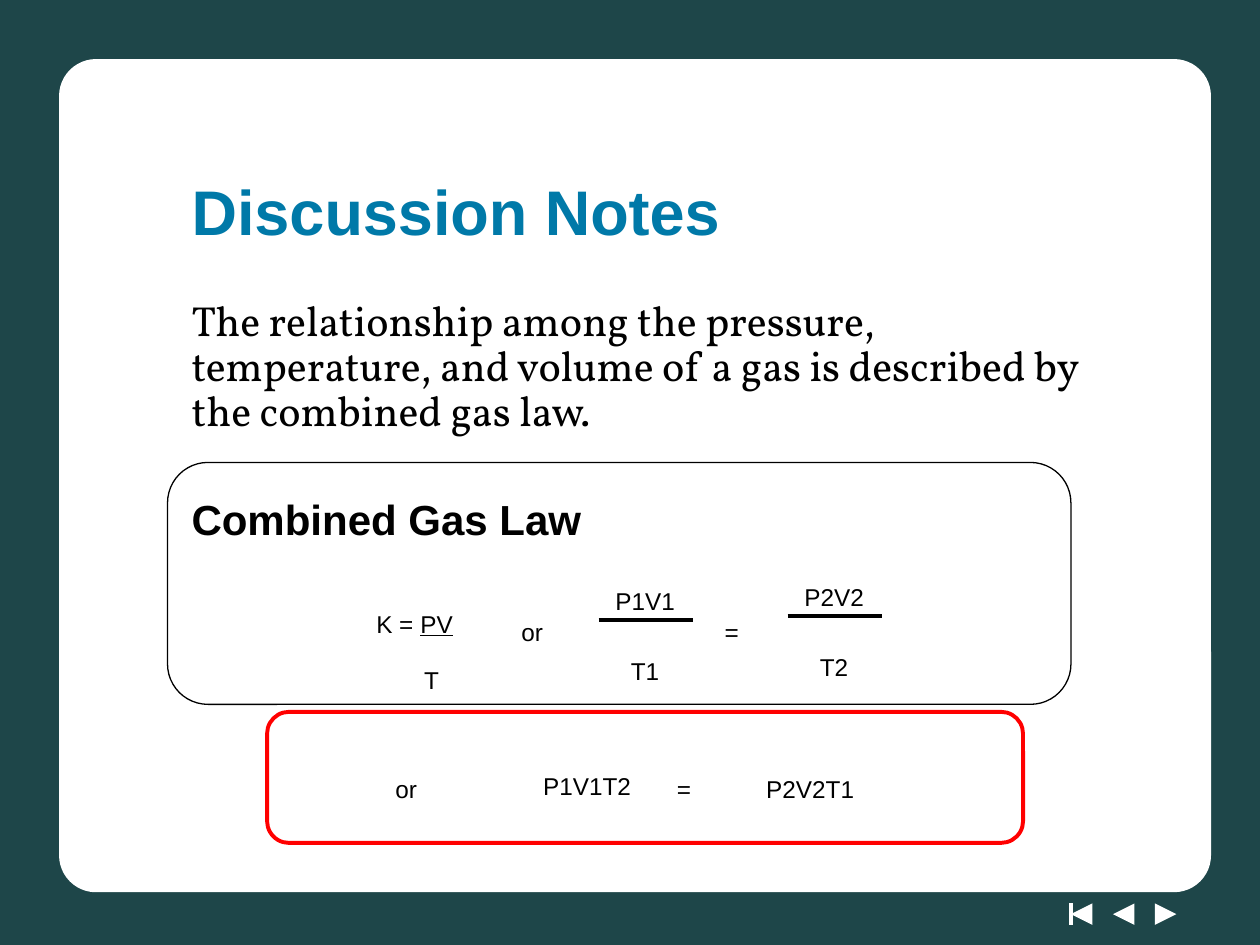
from dataclasses import dataclass

from lxml.etree import SubElement
from pptx import Presentation
from pptx.dml.color import RGBColor
from pptx.enum.shapes import MSO_CONNECTOR, MSO_SHAPE
from pptx.enum.text import MSO_ANCHOR, MSO_AUTO_SIZE, PP_ALIGN
from pptx.oxml.ns import qn
from pptx.util import Inches, Pt


@dataclass(frozen=True)
class Theme:
    """Colours, fonts and type sizes of the slide."""
    frame: RGBColor = RGBColor(0x1E, 0x46, 0x49)
    paper: RGBColor = RGBColor(0xFF, 0xFF, 0xFF)
    heading: RGBColor = RGBColor(0x00, 0x79, 0xA8)
    ink: RGBColor = RGBColor(0x00, 0x00, 0x00)
    accent: RGBColor = RGBColor(0xFF, 0x00, 0x00)
    sans: str = "Arial"
    serif: str = "Vollkorn"
    title_size: Pt = Pt(36)
    text_size: Pt = Pt(24)


@dataclass(frozen=True)
class Box:
    """A rectangle in inches."""
    left: float
    top: float
    width: float
    height: float

    def within(self, left, top, width, height):
        """Return a box placed relative to this one."""
        return Box(self.left + left, self.top + top, width, height)

    def lengths(self):
        """Return left, top, width and height as lengths."""
        return [Inches(value) for value in (self.left, self.top, self.width, self.height)]


THEME = Theme()


def apply_format(target, values):
    """Set each attribute of the target from a dict."""
    for name, value in values.items():
        setattr(target, name, value)


def add_run(paragraph, text, color=THEME.ink, **values):
    """Add a formatted run of text."""
    run = paragraph.add_run()
    run.text = text
    apply_format(run.font, {"name": THEME.sans, "size": THEME.text_size, **values})
    run.font.color.rgb = color
    return run


def add_panel(slide, kind, box, fill=None, line=None, weight=0, adjustment=None, rotation=0):
    """Add a flat preset shape."""
    shape = slide.shapes.add_shape(kind, *box.lengths())
    shape.rotation = rotation
    shape.shadow.inherit = False
    if adjustment is not None:
        shape.adjustments[0] = adjustment
    if fill is None:
        shape.fill.background()
    else:
        shape.fill.solid()
        shape.fill.fore_color.rgb = fill
    if line is None:
        shape.line.fill.background()
    else:
        shape.line.color.rgb = line
        shape.line.width = Pt(weight)


def add_rule(slide, box, color):
    """Add a straight line across the box."""
    left, top, width, height = box.lengths()
    rule = slide.shapes.add_connector(MSO_CONNECTOR.STRAIGHT, left, top, left + width, top + height)
    rule.line.color.rgb = color
    rule.line.width = Pt(2)
    SubElement(rule._element.spPr, qn("a:effectLst"))


def add_navigation(slide, box):
    """Draw the first, previous and next arrows."""
    for index, rotation in enumerate((270, 270, 90)):
        arrow = box.within(index / 3, 0, box.height, box.height)
        add_panel(slide, MSO_SHAPE.ISOSCELES_TRIANGLE, arrow, THEME.paper, rotation=rotation)
    add_rule(slide, box.within(0, 0, 0, box.height), THEME.paper)


def add_backdrop(slide, box):
    """Draw the dark frame, navigation and white panel."""
    add_panel(slide, MSO_SHAPE.RECTANGLE, box, THEME.frame)
    add_navigation(slide, box.within(8.5, 7.17, 0.84, 0.17))
    add_panel(slide, MSO_SHAPE.ROUNDED_RECTANGLE, box.within(0.5, 0.5, 9.08, 6.55),
              THEME.paper, THEME.paper, 4.5, 0.04)


def place(shape, box, anchor):
    """Move a placeholder to the box and settle its frame."""
    apply_format(shape, dict(zip(("left", "top", "width", "height"), box.lengths())))
    apply_format(shape.text_frame, {"vertical_anchor": anchor, "word_wrap": True,
                                    "auto_size": MSO_AUTO_SIZE.NONE})


def fill_title(shape, box):
    """Place and write the title."""
    place(shape, box, MSO_ANCHOR.MIDDLE)
    paragraph = shape.text_frame.paragraphs[0]
    paragraph.alignment = PP_ALIGN.LEFT
    add_run(paragraph, "Discussion Notes", THEME.heading, size=THEME.title_size, bold=True)


def fill_body(shape, box):
    """Place and write the statement and the name of the law."""
    place(shape, box, MSO_ANCHOR.TOP)
    frame = shape.text_frame
    statement = ("The relationship among the pressure, temperature, and volume of a gas "
                 "is described by the combined gas law.")
    rows = ((statement, Pt(2), {"name": THEME.serif}),
            ("Combined Gas Law", Pt(36), {"bold": True}))
    for index, (text, space, values) in enumerate(rows):
        paragraph = frame.add_paragraph() if index else frame.paragraphs[0]
        apply_format(paragraph, {"alignment": PP_ALIGN.LEFT, "line_spacing": 0.9,
                                 "space_before": space})
        properties = paragraph._p.get_or_add_pPr()
        properties.set("marL", "0")
        properties.set("indent", "0")
        SubElement(properties, qn("a:buNone"))
        add_run(paragraph, text, **values)


def add_formula(slide, box, *lines, underlined="", spacing=0.8, indent=0):
    """Write centred lowered lines, with an optional underlined ending to the first."""
    frame = slide.shapes.add_textbox(*box.lengths()).text_frame
    frame.word_wrap = True
    for index, text in enumerate(lines):
        paragraph = frame.add_paragraph() if index else frame.paragraphs[0]
        apply_format(paragraph, {"alignment": PP_ALIGN.CENTER,
                                 "line_spacing": spacing if index else 0.8,
                                 "space_before": Pt(14 if index else 5)})
        runs = [add_run(paragraph, text)]
        if index:
            paragraph._p.get_or_add_pPr().set("marL", str(Inches(indent)))
        elif underlined:
            runs.append(add_run(paragraph, underlined, underline=True))
        for run in runs:
            run._r.get_or_add_rPr().set("baseline", "-25000")


def add_fraction(slide, box, numerator, denominator):
    """Write a fraction with its bar."""
    add_formula(slide, box, numerator, denominator)
    add_rule(slide, box.within(0.42, 0.5, 0.75, 0), THEME.ink)


def add_law(slide, box):
    """Draw the law written with fractions."""
    add_formula(slide, box.within(1.17, 0.93, 1.58, 0.82), "K = ", "T",
                underlined="PV", spacing=0.5, indent=0.27)
    add_fraction(slide, box.within(3, 0.75, 1.58, 0.94), "P1V1", "T1")
    add_fraction(slide, box.within(4.5, 0.72, 1.58, 0.94), "P2V2", "T2")
    add_formula(slide, box.within(2.42, 1, 1, 0.42), "or ")
    add_formula(slide, box.within(4.17, 1, 0.67, 0.42), "= ")
    add_panel(slide, MSO_SHAPE.ROUNDED_RECTANGLE, box, line=THEME.ink, weight=0.75,
              adjustment=0.167)


def add_product_form(slide, box):
    """Draw the law written as products."""
    add_formula(slide, box.within(1.75, 0.24, 1.58, 0.77), "P1V1T2")
    add_formula(slide, box.within(3, 0.26, 0.67, 0.42), "= ")
    add_formula(slide, box.within(3.52, 0.26, 1.58, 0.77), "P2V2T1")
    add_formula(slide, box.within(0.63, 0.26, 1, 0.42), "or ")
    add_panel(slide, MSO_SHAPE.ROUNDED_RECTANGLE, box, line=THEME.accent, weight=2.25,
              adjustment=0.167)


def main():
    """Build and save the slide."""
    presentation = Presentation()
    apply_format(presentation, {"slide_width": Inches(10), "slide_height": Inches(7.5)})
    slide = presentation.slides.add_slide(presentation.slide_layouts[1])
    title, body = slide.placeholders
    add_backdrop(slide, Box(0, 0, 10, 7.5))
    for shape in (title, body):
        slide.shapes._spTree.append(shape._element)
    fill_title(title, Box(1.42, 1.17, 8.08, 1))
    fill_body(body, Box(1.42, 2.33, 7.5, 0.58))
    add_law(slide, Box(1.33, 3.67, 7.17, 1.92))
    add_product_form(slide, Box(2.12, 5.65, 6, 1.04))
    presentation.save("out.pptx")


if __name__ == "__main__":
    main()
